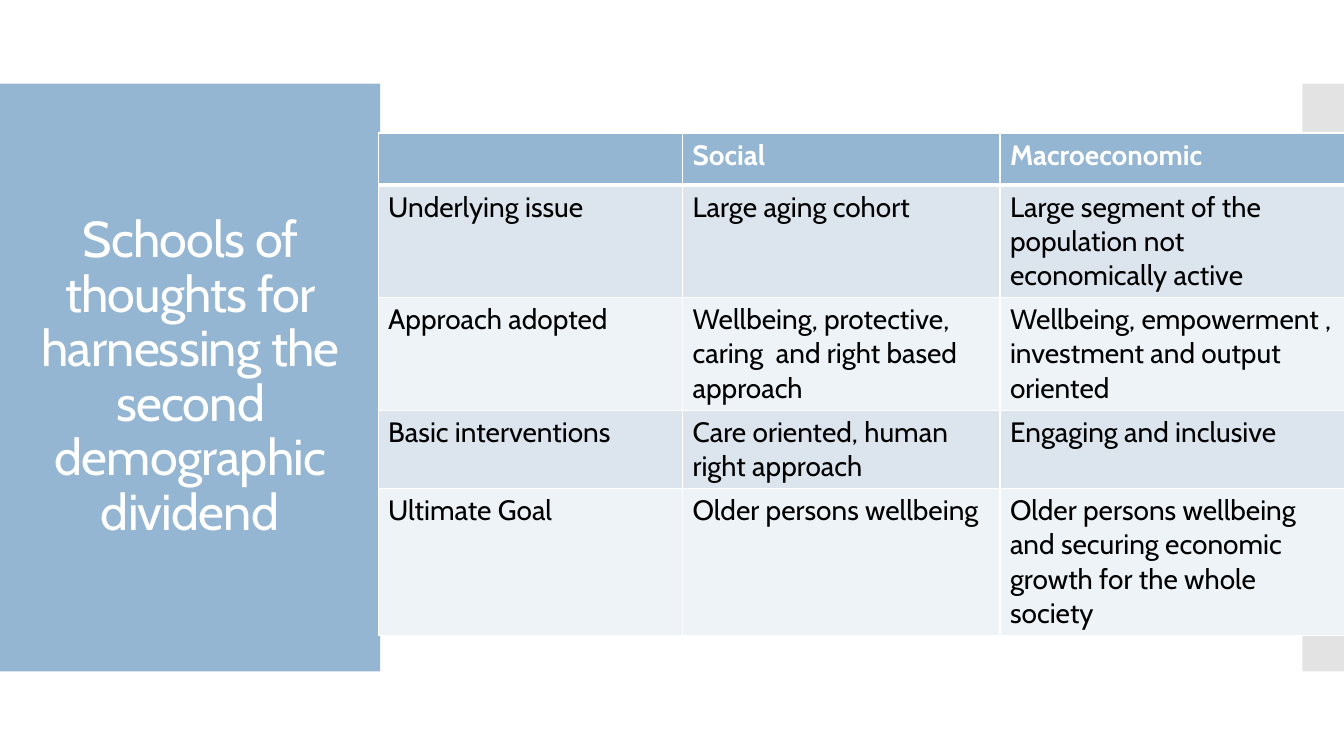
from dataclasses import dataclass

from lxml.etree import SubElement
from pptx import Presentation
from pptx.dml.color import RGBColor
from pptx.enum.shapes import MSO_SHAPE as Shape
from pptx.enum.text import MSO_ANCHOR as Anchor, MSO_AUTO_SIZE as AutoSize, PP_ALIGN as Align
from pptx.oxml.ns import qn
from pptx.util import Cm, Pt


@dataclass(frozen=True)
class Theme:
    font: str = "Cabin"
    title_size: int = 36
    table_size: int = 20
    accent: str = "94B6D2"
    edge: str = "C8C8C8"
    bands: tuple = ("DCE5EE", "EEF3F7")
    light: str = "FFFFFF"
    dark: str = "000000"


THEME = Theme()
TITLE = "Schools of thoughts for harnessing the second demographic dividend"
ROWS = [
    ("", "Social", "Macroeconomic"),
    ("Underlying issue", "Large aging cohort",
     "Large segment of the population not economically active"),
    ("Approach adopted", "Wellbeing, protective, caring  and right based approach",
     "Wellbeing, empowerment , investment and output oriented"),
    ("Basic interventions", "Care oriented, human right approach", "Engaging and inclusive"),
    ("Ultimate Goal", "Older persons wellbeing",
     "Older persons wellbeing and securing economic growth for the whole society"),
]
COL_WIDTHS = (7.67, 8, 8.69)
ROW_HEIGHTS = (1.31, 2.84, 2.84, 1.97, 3.69)


def set_attrs(obj, **values):
    for name, value in values.items():
        setattr(obj, name, value)


def style_font(font, size, color, bold=False):
    set_attrs(font, name=THEME.font, size=Pt(size), bold=bold)
    font.color.rgb = RGBColor.from_string(color)


def add_block(s, box, color, opacity=100):
    """Add a plain rectangle; opacity is in percent."""
    sp = s.shapes.add_shape(Shape.RECTANGLE, *map(Cm, box))
    sp.shadow.inherit = False
    sp.line.fill.background()
    sp.fill.solid()
    sp.fill.fore_color.rgb = RGBColor.from_string(color)
    if opacity < 100:
        clr = sp._element.spPr.find(f"{qn('a:solidFill')}/{qn('a:srgbClr')}")
        SubElement(clr, qn("a:alpha"), val=str(opacity * 1000))
    return sp


def add_title_panel(s, box):
    left, top, width, height = box
    panel = add_block(s, box, THEME.accent)
    title = s.shapes.title
    panel._element.addnext(title._element)
    set_attrs(title, left=Cm(left + 0.7), top=Cm(top + 1.02),
              width=Cm(width - 1.4), height=Cm(height - 2.04))
    tf = title.text_frame
    tf.text = TITLE
    set_attrs(tf, word_wrap=True, auto_size=AutoSize.NONE, vertical_anchor=Anchor.MIDDLE)
    p = tf.paragraphs[0]
    set_attrs(p, alignment=Align.CENTER, line_spacing=0.9)
    r = p.runs[0]
    style_font(r.font, THEME.title_size, THEME.light)
    r.font._element.set("spc", "-60")


def add_borders(cell, row):
    """Draw white cell edges, thicker between header and body."""
    widths = {"L": 1, "R": 1, "T": 3 if row == 1 else 1, "B": 3 if row == 0 else 1}
    tc_pr = cell._tc.get_or_add_tcPr()
    for side, width in widths.items():
        ln = SubElement(tc_pr, qn(f"a:ln{side}"), w=str(Pt(width)))
        fill = SubElement(ln, qn("a:solidFill"))
        SubElement(fill, qn("a:srgbClr"), val=THEME.light)


def add_comparison_table(s, left, top):
    frame = s.shapes.add_table(len(ROWS), len(COL_WIDTHS), Cm(left), Cm(top),
                               Cm(sum(COL_WIDTHS)), Cm(sum(ROW_HEIGHTS)))
    table = frame.table
    for col, width in zip(table.columns, COL_WIDTHS):
        col.width = Cm(width)
    for i, (texts, height) in enumerate(zip(ROWS, ROW_HEIGHTS)):
        table.rows[i].height = Cm(height)
        header = i == 0
        for j, text in enumerate(texts):
            cell = table.cell(i, j)
            cell.text = text
            add_borders(cell, i)
            cell.fill.solid()
            fill = THEME.accent if header else THEME.bands[(i - 1) % 2]
            cell.fill.fore_color.rgb = RGBColor.from_string(fill)
            style_font(cell.text_frame.paragraphs[0].font, THEME.table_size,
                       THEME.light if header else THEME.dark, header)
            for r in cell.text_frame.paragraphs[0].runs:
                style_font(r.font, THEME.table_size,
                           THEME.light if header else THEME.dark, header)


def main():
    prs = Presentation()
    set_attrs(prs, slide_width=Cm(33.87), slide_height=Cm(19.05))
    s = prs.slides.add_slide(prs.slide_layouts[5])
    band_top, band_height = 2.11, 14.81
    add_title_panel(s, (0, band_top, 9.58, band_height))
    add_block(s, (32.82, band_top, 1.05, band_height), THEME.edge, opacity=50)
    add_comparison_table(s, 9.53, 3.35)
    prs.save("out.pptx")


if __name__ == "__main__":
    main()
